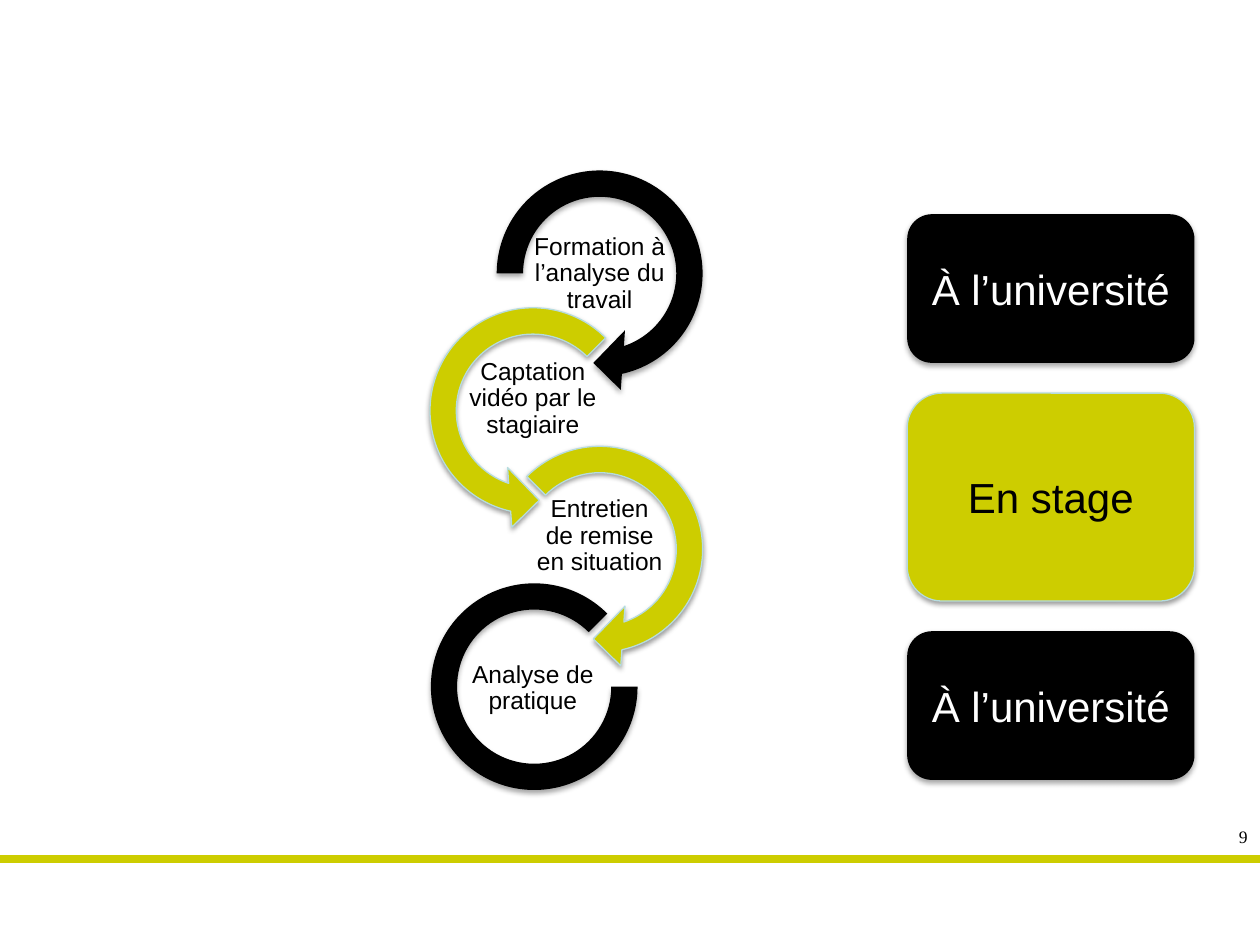
import dataclasses
import typing

import lxml.etree
import pptx
import pptx.dml.color
import pptx.enum.shapes
import pptx.enum.text
import pptx.oxml.ns
import pptx.util

Inches = pptx.util.Inches
Pt = pptx.util.Pt
ShapeType = pptx.enum.shapes.MSO_SHAPE
Align = pptx.enum.text.PP_ALIGN
Anchor = pptx.enum.text.MSO_ANCHOR
Box = tuple[float, float, float, float]

BLACK, WHITE, LIME, PALE_BLUE = "000000", "FFFFFF", "CDCD00", "B6DCDF"


@dataclasses.dataclass(frozen=True)
class Theme:
    fill: str
    text: str
    outline: typing.Optional[str]
    shadow_opacity: int
    shadow_distance: float


UNIVERSITY = Theme(BLACK, WHITE, None, 35, 1.8)
INTERNSHIP = Theme(LIME, BLACK, PALE_BLUE, 38, 1.6)


@dataclasses.dataclass(frozen=True)
class Step:
    label: str
    theme: Theme
    kind: ShapeType
    left: float
    top: float
    size: float
    adjustments: tuple[float, ...]
    label_left: float
    label_top: float


@dataclasses.dataclass(frozen=True)
class Place:
    label: str
    theme: Theme
    top: float
    height: float


STEPS = (
    Step("Formation à l’analyse du travail", UNIVERSITY, ShapeType.CIRCULAR_ARROW,
         3.81, 1.22, 1.9, (0.11, 11.42, 45, 108, 0.125), 4.23, 1.91),
    Step("Captation vidéo par le stagiaire", INTERNSHIP, ShapeType.LEFT_CIRCULAR_ARROW,
         3.28, 2.31, 1.9, (0.11, 11.42, 63, 189, 0.125), 3.7, 2.9),
    Step("Entretien de remise en situation", INTERNSHIP, ShapeType.CIRCULAR_ARROW,
         3.81, 3.41, 1.9, (0.11, 11.42, 45, 135, 0.125), 4.23, 3.99),
    Step("Analyse de pratique", UNIVERSITY, ShapeType.BLOCK_ARC,
         3.42, 4.63, 1.64, (0, 189, 0.127), 3.7, 5.2),
)
PLACES = (
    Place("À l’université", UNIVERSITY, 1.7, 1.18),
    Place("En stage", INTERNSHIP, 3.12, 1.65),
    Place("À l’université", UNIVERSITY, 5.01, 1.18),
)


def color(value: str) -> pptx.dml.color.RGBColor:
    return pptx.dml.color.RGBColor.from_string(value)


def apply_format(target: typing.Any, values: dict[str, typing.Any]) -> None:
    for name, value in values.items():
        setattr(target, name, value)


def add_effects(properties: typing.Any) -> typing.Any:
    return lxml.etree.SubElement(properties, pptx.oxml.ns.qn("a:effectLst"))


def add_shadow(shape: typing.Any, theme: Theme) -> None:
    qn = pptx.oxml.ns.qn
    shape.shadow.inherit = False
    effects = shape.element.spPr.find(qn("a:effectLst"))
    shadow = lxml.etree.SubElement(
        effects, qn("a:outerShdw"), blurRad=str(Pt(3.1)),
        dist=str(Pt(theme.shadow_distance)), dir="5400000", rotWithShape="0")
    shade = lxml.etree.SubElement(shadow, qn("a:srgbClr"), val=BLACK)
    lxml.etree.SubElement(shade, qn("a:alpha"), val=str(theme.shadow_opacity * 1000))


def write_text(shape: typing.Any, text: str, size: float, text_color: str,
               font: str = "Arial", align: Align = Align.CENTER, spacing: float = 1.0,
               frame: typing.Optional[dict[str, typing.Any]] = None) -> None:
    apply_format(shape.text_frame, {"word_wrap": True, **(frame or {})})
    paragraph = shape.text_frame.paragraphs[0]
    apply_format(paragraph, {"text": text, "alignment": align, "line_spacing": spacing})
    apply_format(paragraph.font, {"name": font, "size": Pt(size)})
    paragraph.font.color.rgb = color(text_color)


def add_themed_shape(slide: typing.Any, kind: ShapeType, box: Box, theme: Theme) -> typing.Any:
    shape = slide.shapes.add_shape(kind, *map(Inches, box))
    shape.fill.solid()
    shape.fill.fore_color.rgb = color(theme.fill)
    if theme.outline:
        shape.line.color.rgb = color(theme.outline)
        shape.line.width = Pt(0.75)
    else:
        shape.line.fill.background()
    add_shadow(shape, theme)
    return shape


def add_step(slide: typing.Any, step: Step) -> None:
    box = (step.left, step.top, step.size, step.size)
    ring = add_themed_shape(slide, step.kind, box, step.theme)
    for index, value in enumerate(step.adjustments):
        ring.adjustments[index] = value
    label = slide.shapes.add_textbox(
        *map(Inches, (step.label_left, step.label_top, 1.06, 0.53)))
    margins = {f"margin_{side}": Inches(0.01) for side in ("left", "top", "right", "bottom")}
    write_text(label, step.label, 14, BLACK, spacing=0.9,
               frame={"vertical_anchor": Anchor.MIDDLE, **margins})


def add_place(slide: typing.Any, place: Place) -> None:
    box = (7.2, place.top, 2.28, place.height)
    shape = add_themed_shape(slide, ShapeType.ROUNDED_RECTANGLE, box, place.theme)
    write_text(shape, place.label, 24, place.theme.text,
               frame={"vertical_anchor": Anchor.MIDDLE})


def add_footer(slide: typing.Any) -> None:
    rule = slide.shapes.add_connector(
        pptx.enum.shapes.MSO_CONNECTOR.STRAIGHT, *map(Inches, (0, 6.82, 10, 6.82)))
    rule.line.color.rgb = color(LIME)
    rule.line.width = Pt(4.5)
    add_effects(rule.element.spPr)
    number = slide.shapes.add_textbox(*map(Inches, (9.49, 6.51, 0.51, 0.27)))
    write_text(number, "9", 10, BLACK, font="Times New Roman", align=Align.RIGHT)


def main() -> None:
    """Build the slide linking training steps to the places where they happen."""
    presentation = pptx.Presentation()
    apply_format(presentation, {"slide_width": Inches(10), "slide_height": Inches(7.5)})
    slide = presentation.slides.add_slide(presentation.slide_layouts[6])
    add_footer(slide)
    for step in STEPS:
        add_step(slide, step)
    for place in PLACES:
        add_place(slide, place)
    presentation.save("out.pptx")


if __name__ == "__main__":
    main()
